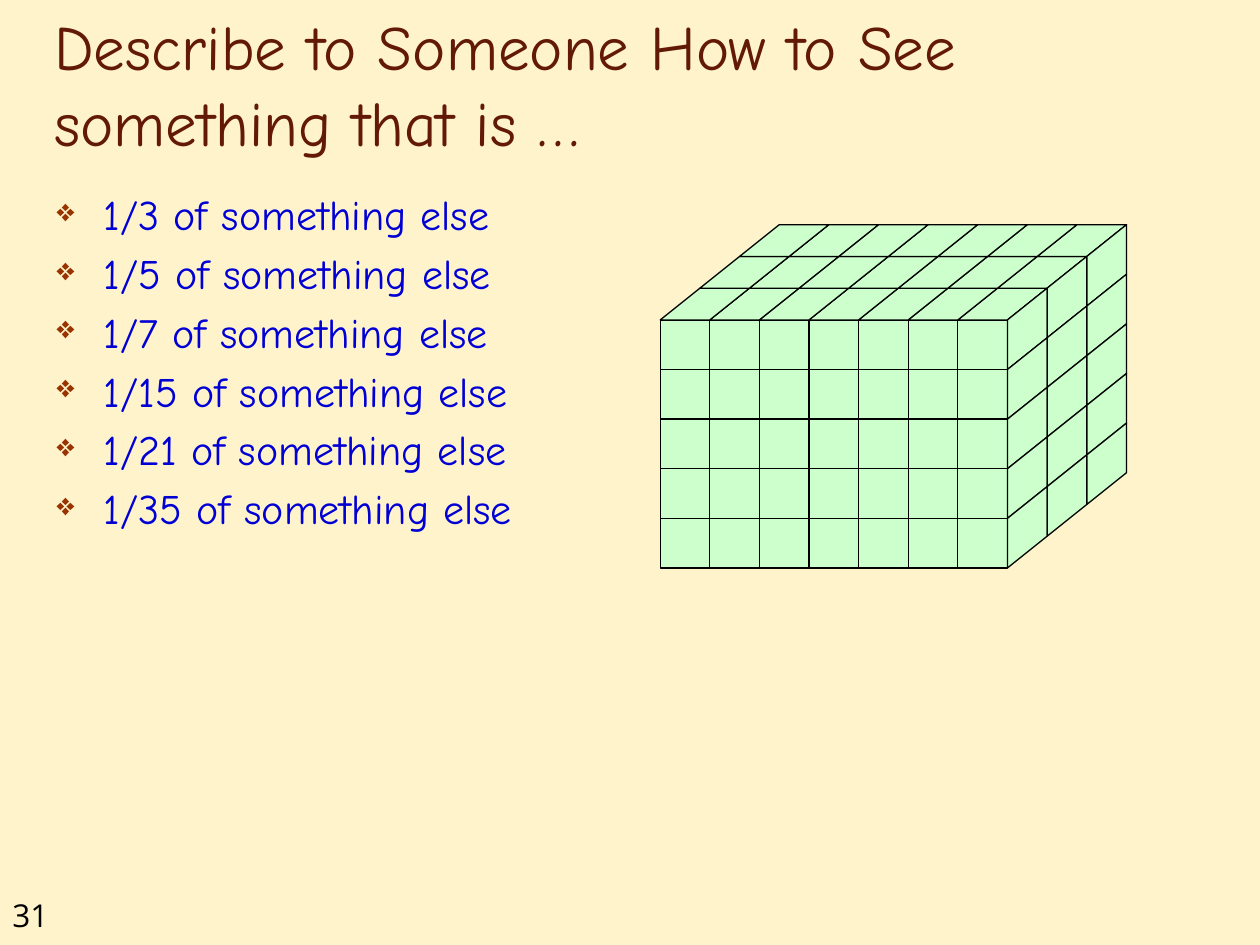
import lxml.etree
import pptx
import pptx.dml.color
import pptx.enum.shapes
import pptx.enum.text
import pptx.oxml.ns
import pptx.util
from pptx.util import Cm, Pt

COLORS = {
    "background": "FFF3CC",
    "title": "631908",
    "fraction": "0000D4",
    "bullet": "993300",
    "cube": "CCFFCC",
    "ink": "000000",
}
FRACTIONS = ["1/3", "1/5", "1/7", "1/15", "1/21", "1/35"]
COLUMNS, ROWS, LAYERS = 7, 5, 3
CUBE = 1.0
DEPTH_X, DEPTH_Y = 0.8, 0.64
SHAPES = pptx.enum.shapes.MSO_SHAPE
ANCHOR = pptx.enum.text.MSO_ANCHOR


def rgb(name):
    return pptx.dml.color.RGBColor.from_string(COLORS[name])


def apply_format(target, values):
    for attribute, value in values.items():
        setattr(target, attribute, value)


def format_text(frame, font, color, anchor=ANCHOR.TOP, **paragraph_format):
    apply_format(frame, {
        "word_wrap": True,
        "auto_size": pptx.enum.text.MSO_AUTO_SIZE.NONE,
        "vertical_anchor": anchor,
    })
    for paragraph in frame.paragraphs:
        apply_format(paragraph, {"alignment": pptx.enum.text.PP_ALIGN.LEFT, **paragraph_format})
        for run in paragraph.runs:
            apply_format(run.font, font)
            run.font.color.rgb = rgb(color)


def place_title(slide, left, top, width, height):
    title = slide.shapes.title
    apply_format(title, {"left": Cm(left), "top": Cm(top),
                         "width": Cm(width), "height": Cm(height)})
    title.text_frame.text = "Describe to Someone How to See\vsomething that is …"
    format_text(title.text_frame, {"name": "Comic Neue", "size": Pt(36)}, "title", ANCHOR.BOTTOM)


def add_bullet(paragraph):
    properties = paragraph._p.get_or_add_pPr()
    properties.set("marL", str(Cm(0.95)))
    properties.set("indent", str(-Cm(0.95)))

    def child(parent, tag, **attributes):
        return lxml.etree.SubElement(parent, pptx.oxml.ns.qn(tag), attributes)

    child(child(properties, "a:buClr"), "a:srgbClr", val=COLORS["bullet"])
    child(properties, "a:buSzPct", val="75000")
    child(properties, "a:buChar", char="❖")


def add_fractions(slide, left, top, width, height):
    frame = slide.shapes.add_textbox(Cm(left), Cm(top), Cm(width), Cm(height)).text_frame
    frame.text = "\n".join(f"{fraction} of something else" for fraction in FRACTIONS)
    format_text(frame, {"name": "Comic Neue", "size": Pt(24)}, "fraction", space_before=Pt(4.8))
    for paragraph in frame.paragraphs:
        add_bullet(paragraph)


def add_page_number(slide, left, top, width, height):
    frame = slide.shapes.add_textbox(Cm(left), Cm(top), Cm(width), Cm(height)).text_frame
    frame.text = "31"
    format_text(frame, {"name": "Open Sans", "size": Pt(18)}, "ink")


def add_face(group, kind, left, top, width, height, slant=None):
    face = group.shapes.add_shape(kind, Cm(left), Cm(top), Cm(width), Cm(height))
    face.shadow.inherit = False
    face.fill.solid()
    face.fill.fore_color.rgb = rgb("cube")
    face.line.color.rgb = rgb("ink")
    face.line.width = Pt(0.75)
    if slant is not None:
        face.adjustments[0] = slant
    return face


def add_cube_block(slide, left, top):
    """Draw the block of cubes; left and top locate its front face."""
    front = slide.shapes.add_group_shape()
    for row in reversed(range(ROWS)):
        for column in range(COLUMNS):
            add_face(front, SHAPES.RECTANGLE, left + column * CUBE, top + row * CUBE, CUBE, CUBE)

    for layer in range(LAYERS):
        lid = slide.shapes.add_group_shape()
        for column in reversed(range(COLUMNS)):
            add_face(lid, SHAPES.PARALLELOGRAM,
                     left + column * CUBE + layer * DEPTH_X, top - (layer + 1) * DEPTH_Y,
                     CUBE + DEPTH_X, DEPTH_Y, DEPTH_X / DEPTH_Y)

    # Side faces are turned a quarter, so their length runs vertically.
    length = CUBE + DEPTH_Y
    for row in range(ROWS):
        side = slide.shapes.add_group_shape()
        for layer in range(LAYERS):
            center_x = left + COLUMNS * CUBE + (layer + 0.5) * DEPTH_X
            center_y = top + row * CUBE - (layer + 1) * DEPTH_Y + length / 2
            face = add_face(side, SHAPES.PARALLELOGRAM, center_x - length / 2,
                            center_y - DEPTH_X / 2, length, DEPTH_X, DEPTH_Y / DEPTH_X)
            face.rotation = 270
            face.element.spPr.xfrm.set("flipV", "1")


def main():
    deck = pptx.Presentation()
    apply_format(deck, {"slide_width": Cm(25.4), "slide_height": Cm(19.05)})
    slide = deck.slides.add_slide(deck.slide_layouts.get_by_name("Title Only"))
    slide.background.fill.solid()
    slide.background.fill.fore_color.rgb = rgb("background")
    add_page_number(slide, 0, 17.93, 1.9, 1.02)
    place_title(slide, 0.84, 0.43, 21.6, 2.9)
    add_fractions(slide, 0.89, 3.68, 12, 11.43)
    add_cube_block(slide, 13.31, 6.45)
    deck.save("out.pptx")


if __name__ == "__main__":
    main()
